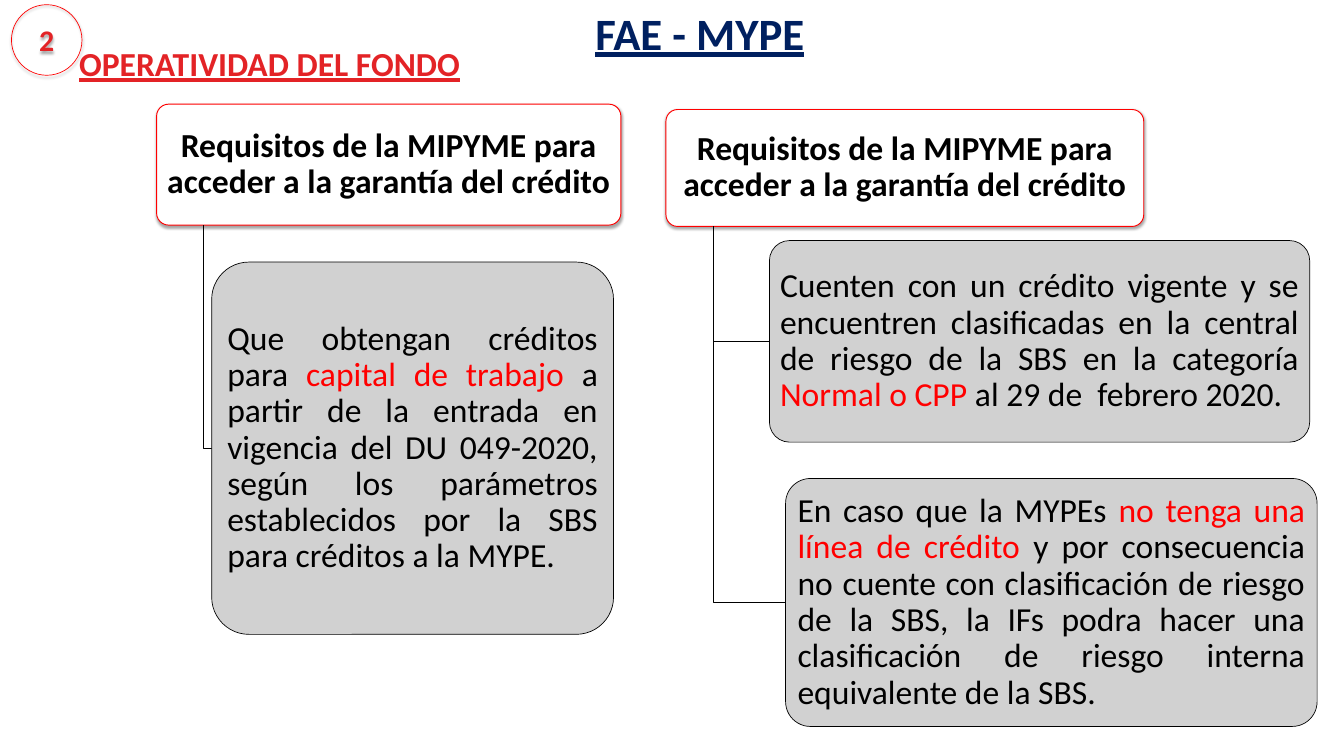
from dataclasses import dataclass

from lxml import etree
from pptx import Presentation
from pptx.dml.color import RGBColor
from pptx.enum.shapes import MSO_SHAPE
from pptx.enum.text import MSO_ANCHOR, PP_ALIGN
from pptx.oxml.ns import qn
from pptx.util import Inches, Pt

ROUNDED, OVAL = MSO_SHAPE.ROUNDED_RECTANGLE, MSO_SHAPE.OVAL
TOP, MIDDLE = MSO_ANCHOR.TOP, MSO_ANCHOR.MIDDLE
LEFT, CENTER, JUSTIFY = PP_ALIGN.LEFT, PP_ALIGN.CENTER, PP_ALIGN.JUSTIFY


@dataclass(frozen=True)
class Theme:
    font: str = "Calibri"
    navy: str = "002060"
    crimson: str = "E32326"
    red: str = "FF0000"
    black: str = "000000"
    white: str = "FFFFFF"
    gray: str = "CCCCCC"
    title: int = 48
    body: int = 36
    number: int = 32


T = Theme()


def write(sp, text, size=T.body, color=T.black, bold=False, underline=False,
          align=LEFT, anchor=MIDDLE, spacing=1.0, inset=(0.1, 0.05)):
    """Write text in a shape; parts between * are red."""
    tf = sp.text_frame
    tf.word_wrap = True
    tf.vertical_anchor = anchor
    tf.margin_left = tf.margin_right = Inches(inset[0])
    tf.margin_top = tf.margin_bottom = Inches(inset[1])
    p = tf.paragraphs[0]
    p.alignment = align
    p.line_spacing = spacing
    for i, part in enumerate(text.split("*")):
        r = p.add_run()
        r.text = part
        r.font.name = T.font
        r.font.size = Pt(size)
        r.font.bold = bold
        r.font.underline = underline
        r.font.color.rgb = RGBColor.from_string(T.red if i % 2 else color)


def style(sp, line, width, fill=None, alpha=None, shadow=False):
    """Set the line, fill and shadow of a shape."""
    sp.line.color.rgb = RGBColor.from_string(line)
    sp.line.width = Pt(width)
    if fill:
        sp.fill.solid()
        sp.fill.fore_color.rgb = RGBColor.from_string(fill)
    else:
        sp.fill.background()
    sp_pr = sp._element.spPr
    if alpha:
        clr = sp_pr.find(qn("a:solidFill")).find(qn("a:srgbClr"))
        etree.SubElement(clr, qn("a:alpha"), val=str(alpha * 1000))
    sp.shadow.inherit = False
    if shadow:
        outer = etree.SubElement(
            sp_pr.find(qn("a:effectLst")), qn("a:outerShdw"), blurRad=str(Pt(3.1)),
            dist=str(Pt(1.8)), dir="5400000", rotWithShape="0")
        clr = etree.SubElement(outer, qn("a:srgbClr"), val=T.black)
        etree.SubElement(clr, qn("a:alpha"), val="35000")


prs = Presentation()
prs.slide_width, prs.slide_height = Inches(20), Inches(11.25)
s = prs.slides.add_slide(prs.slide_layouts[5])

# Title
title = s.shapes.title
title.left, title.top = Inches(7.33), Inches(0.03)
title.width, title.height = Inches(6.17), Inches(0.91)
write(title, "FAE - MYPE", size=T.title, color=T.navy, bold=True, underline=True,
      align=CENTER, anchor=TOP)

# Section heading and its number
heading = s.shapes.add_textbox(Inches(1.08), Inches(0.59), Inches(9.17), Inches(0.71))
write(heading, "OPERATIVIDAD DEL FONDO", color=T.crimson, bold=True, underline=True,
      anchor=TOP)
badge = s.shapes.add_shape(OVAL, Inches(0.17), Inches(0.07), Inches(1.05), Inches(1.05))
style(badge, T.red, 0.75, shadow=True)
write(badge, "2", size=T.number, color=T.crimson, bold=True, align=CENTER)

# Two hierarchies: header box, then requirement boxes as (box, text)
HEADER = "Requisitos de la MIPYME para acceder a la garantía del crédito"
hierarchies = [
    ((2.33, 1.55, 6.91, 1.8), [
        ((3.15, 3.9, 5.98, 5.54),
         "Que obtengan créditos para *capital de trabajo *a partir de la entrada en "
         "vigencia del DU 049-2020, según los parámetros establecidos por la SBS para "
         "créditos a la MYPE."),
    ]),
    ((9.91, 1.63, 7.11, 1.74), [
        ((11.45, 3.58, 8.04, 3),
         "Cuenten con un crédito vigente y se encuentren clasificadas en la central de "
         "riesgo de la SBS en la categoría *Normal o CPP *al 29 de  febrero 2020."),
        ((11.69, 7.12, 7.91, 3.69),
         "En caso que la MYPEs *no tenga una línea de crédito* y por consecuencia no "
         "cuente con clasificación de riesgo de la SBS, la IFs podra hacer una "
         "clasificación de riesgo interna equivalente de la SBS. "),
    ]),
]
BOX_TEXT = dict(spacing=0.9, inset=(0.07, 0.05))

for (x, y, w, h), requirements in hierarchies:
    header = s.shapes.add_shape(ROUNDED, *map(Inches, (x, y, w, h)))
    header.adjustments[0] = 0.1
    style(header, T.red, 1, fill=T.white, shadow=True)
    write(header, HEADER, bold=True, align=CENTER, **BOX_TEXT)

    stem_x, stem_y = Inches(x + w / 10), Inches(y + h)
    for (bx, by, bw, bh), text in requirements:
        # Branch from the header to the middle of the box's left side
        mid_y = Inches(by + bh / 2)
        fb = s.shapes.build_freeform(stem_x, stem_y)
        fb.add_line_segments([(stem_x, mid_y), (Inches(bx), mid_y)], close=False)
        style(fb.convert_to_shape(), T.black, 0.75)

        box = s.shapes.add_shape(ROUNDED, *map(Inches, (bx, by, bw, bh)))
        box.adjustments[0] = 0.1
        style(box, T.black, 0.75, fill=T.gray, alpha=90)
        write(box, text, align=JUSTIFY, **BOX_TEXT)

prs.save("out.pptx")
